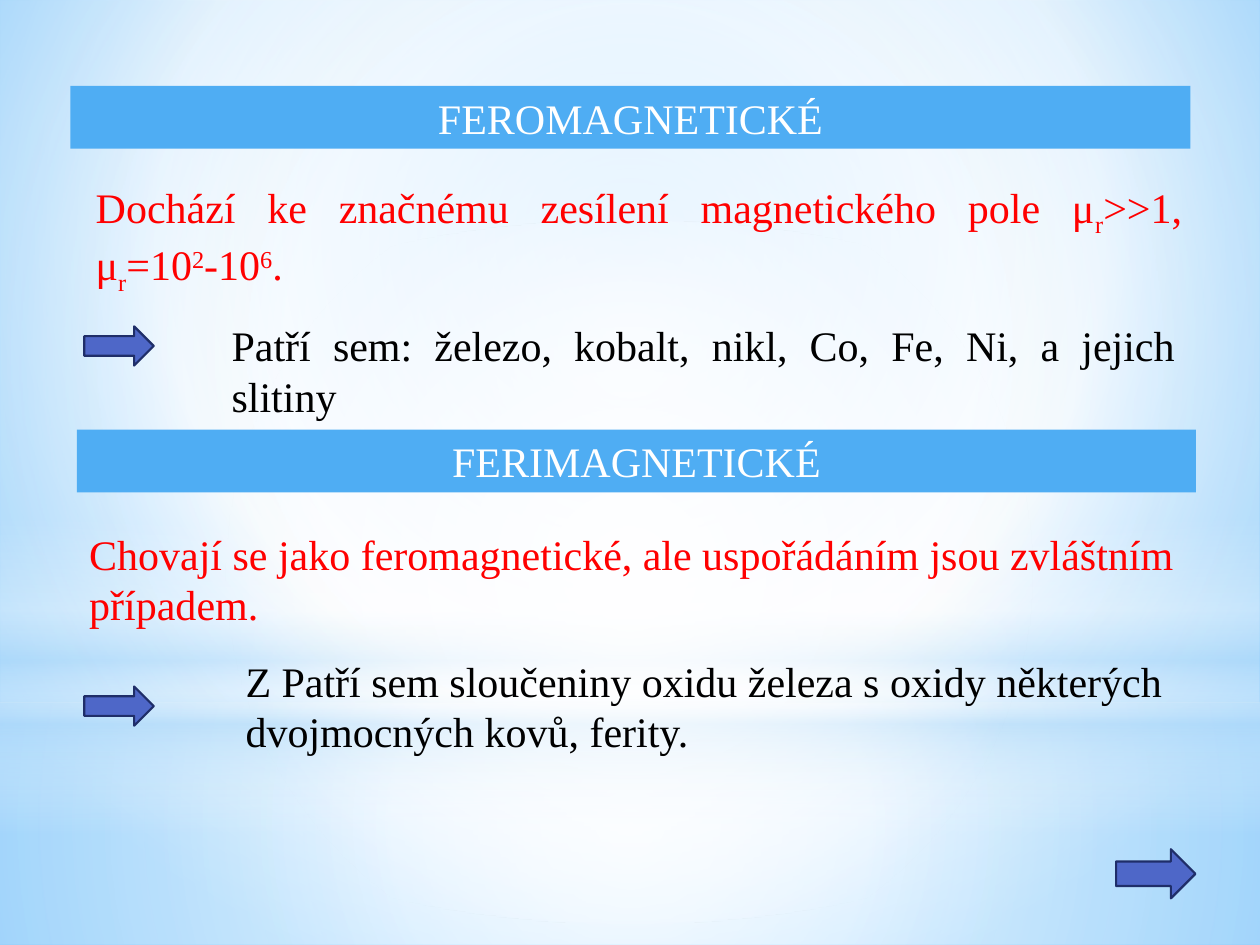
from lxml import etree
from pptx import Presentation
from pptx.dml.color import RGBColor
from pptx.enum.shapes import MSO_SHAPE
from pptx.enum.text import MSO_ANCHOR, PP_ALIGN
from pptx.oxml.ns import qn
from pptx.util import Cm, Pt

RECTANGLE, ELLIPSE, ARROW = MSO_SHAPE.RECTANGLE, MSO_SHAPE.OVAL, MSO_SHAPE.RIGHT_ARROW
LEFT, CENTER, JUSTIFY = PP_ALIGN.LEFT, PP_ALIGN.CENTER, PP_ALIGN.JUSTIFY

THEME = {
    "font": "Times New Roman", "size": 24,
    "banner": "4FADF3", "banner_text": "FFFFFF",
    "definition": "FF0000", "members": "000000",
    "arrow": "4E67C8", "arrow_line": "1F2E69", "arrow_line_width": 1.25,
    "white": "FFFFFF", "haze": "B4DCFA", "sky": "9ED5FF", "deep_sky": "5BB9FF",
}
WIDTH, HEIGHT = 25.4, 19.05
HORIZON = 14.17
BANNER_HEIGHT, TEXT_HEIGHT = 1.27, 2.31
SUB, SUPER = -25, 30
MIDDLE = (50, 50, 50, 50)

# Gradient stops: position %, theme colour, opacity %
SKY_STOPS = [(0, "sky", 100), (60, "white", 100), (100, "deep_sky", 100)]
SKY_FOCUS = (20, 10, 20, 60)

# Shape, (left, top, width, height) in cm, stops, focus (None: top to bottom)
BACKDROP = [
    (RECTANGLE, (0, HORIZON, WIDTH, HEIGHT - HORIZON),
     [(0, "white", 91), (37, "white", 76), (100, "haze", 79)], MIDDLE),
    (RECTANGLE, (0, 0, WIDTH, HORIZON),
     [(0, "white", 89), (48, "white", 62), (100, "haze", 79)], MIDDLE),
    (RECTANGLE, (0, 10.46, WIDTH, 6.35),
     [(0, "white", 0), (29, "white", 30), (45, "haze", 40),
      (55, "white", 26), (65, "haze", 60), (100, "white", 0)], None),
    (ELLIPSE, (0, 4.45, WIDTH, HORIZON),
     [(0, "white", 100), (56, "white", 0)], MIDDLE),
]

# Positions are (left, top, width) in cm; runs are (text, baseline %)
SECTIONS = [
    {
        "title": "FEROMAGNETICKÉ", "title_at": (1.42, 1.73, 22.58),
        "definition": [("Dochází ke značnému zesílení magnetického pole μ", 0),
                       ("r", SUB), (">>1, μ", 0), ("r", SUB), ("=10", 0),
                       ("2", SUPER), ("-10", 0), ("6", SUPER), (".", 0)],
        "definition_at": (1.68, 3.53, 22.4),
        "members": [("Patří sem: železo, kobalt, nikl, Co, Fe, Ni, a jejich slitiny", 0)],
        "members_at": (4.42, 6.32, 19.53),
        "align": JUSTIFY,
    },
    {
        "title": "FERIMAGNETICKÉ", "title_at": (1.55, 8.66, 22.56),
        "definition": [("Chovají se jako feromagnetické, ale uspořádáním jsou "
                        "zvláštním případem.", 0)],
        "definition_at": (1.55, 10.52, 22.58),
        "members": [("Z Patří sem sloučeniny oxidu železa s oxidy některých "
                     "dvojmocných kovů, ferity.", 0)],
        "members_at": (4.7, 13.08, 19.79),
        "align": LEFT,
    },
]
ARROWS = [(1.7, 6.58, 1.4, 0.79), (1.7, 13.84, 1.4, 0.79), (22.5, 17.12, 1.6, 0.99)]


def color(name):
    return RGBColor.from_string(THEME[name])


def set_gradient(properties, stops, focus):
    """Replace the solid fill in a properties element by a gradient."""
    gradient = etree.Element(qn("a:gradFill"), rotWithShape="1")
    stop_list = etree.SubElement(gradient, qn("a:gsLst"))
    for position, name, opacity in stops:
        stop = etree.SubElement(stop_list, qn("a:gs"), pos=str(position * 1000))
        rgb = etree.SubElement(stop, qn("a:srgbClr"), val=THEME[name])
        if opacity < 100:
            etree.SubElement(rgb, qn("a:alpha"), val=str(opacity * 1000))
    if focus:
        shade = etree.SubElement(gradient, qn("a:path"), path="circle")
        sides = {side: str(share * 1000) for side, share in zip("ltrb", focus)}
        etree.SubElement(shade, qn("a:fillToRect"), **sides)
    else:
        etree.SubElement(gradient, qn("a:lin"), ang="5400000", scaled="0")
    properties.replace(properties.find(qn("a:solidFill")), gradient)


def add_filled(slide, kind, box, fill):
    shape = slide.shapes.add_shape(kind, *map(Cm, box))
    shape.shadow.inherit = False
    shape.fill.solid()
    shape.fill.fore_color.rgb = color(fill)
    shape.line.fill.background()
    return shape


def write(shape, runs, *, ink, align=LEFT, anchor=MSO_ANCHOR.TOP):
    frame = shape.text_frame
    frame.word_wrap = True
    frame.vertical_anchor = anchor
    paragraph = frame.paragraphs[0]
    paragraph.alignment = align
    for text, baseline in runs:
        run = paragraph.add_run()
        run.text = text
        run.font.name = THEME["font"]
        run.font.size = Pt(THEME["size"])
        run.font.color.rgb = color(ink)
        if baseline:
            run.font._element.set("baseline", str(baseline * 1000))


def add_section(slide, section):
    banner = add_filled(slide, RECTANGLE, (*section["title_at"], BANNER_HEIGHT), "banner")
    write(banner, [(section["title"], 0)], ink="banner_text", align=CENTER,
          anchor=MSO_ANCHOR.MIDDLE)
    for part in ("definition", "members"):
        box = (*section[part + "_at"], TEXT_HEIGHT)
        write(slide.shapes.add_textbox(*map(Cm, box)), section[part],
              ink=part, align=section["align"])


def main():
    deck = Presentation()
    deck.slide_width, deck.slide_height = Cm(WIDTH), Cm(HEIGHT)
    slide = deck.slides.add_slide(deck.slide_layouts[6])

    slide.background.fill.solid()
    set_gradient(slide.element.find(".//" + qn("p:bgPr")), SKY_STOPS, SKY_FOCUS)
    for kind, box, stops, focus in BACKDROP:
        layer = add_filled(slide, kind, box, "white")
        set_gradient(layer.element.spPr, stops, focus)

    for section in SECTIONS:
        add_section(slide, section)
    for box in ARROWS:
        arrow = add_filled(slide, ARROW, box, "arrow")
        arrow.line.color.rgb = color("arrow_line")
        arrow.line.width = Pt(THEME["arrow_line_width"])

    deck.save("out.pptx")


if __name__ == "__main__":
    main()
